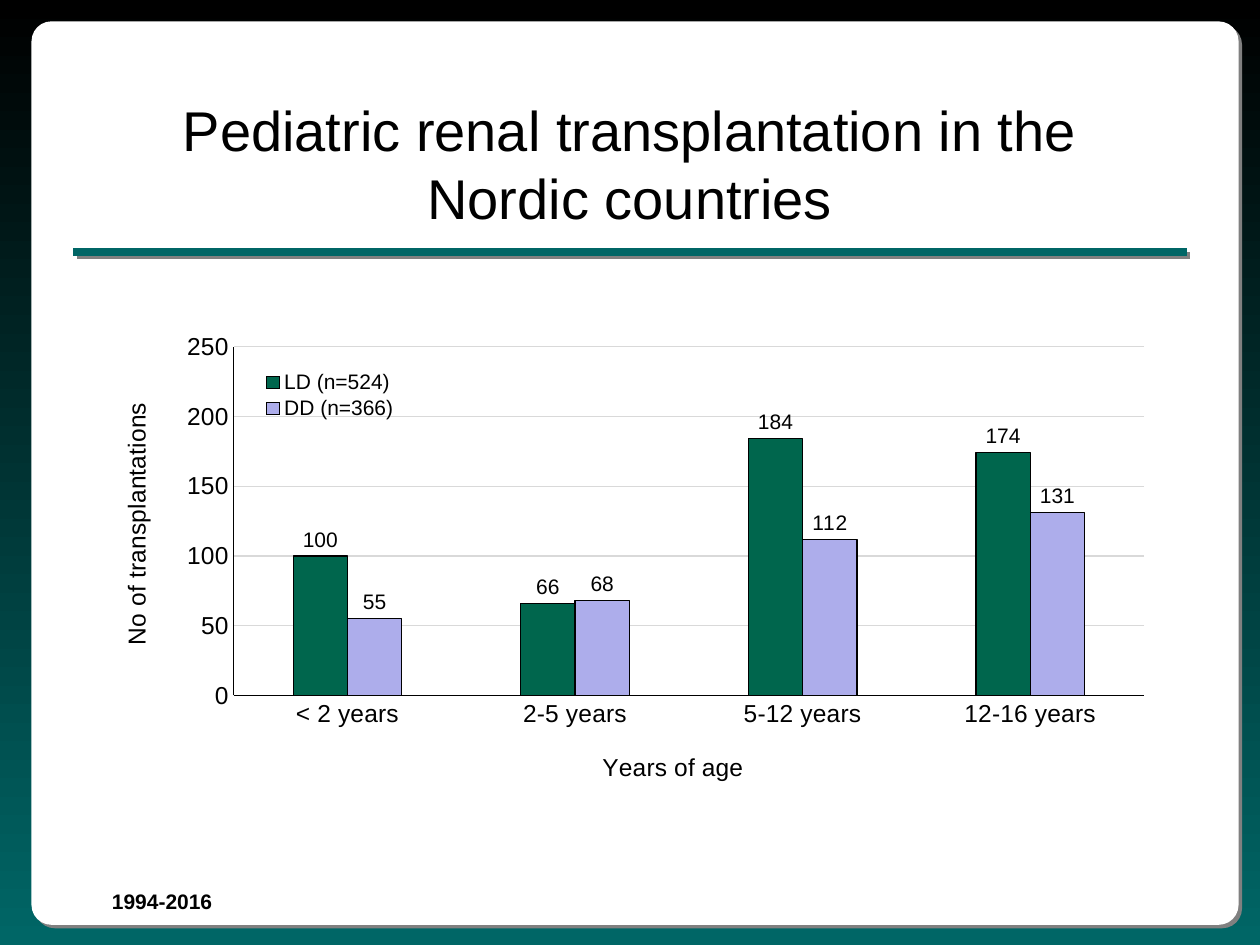
from dataclasses import dataclass

from lxml.etree import SubElement
from pptx import Presentation
from pptx.chart.data import CategoryChartData
from pptx.dml.color import RGBColor as RGB
from pptx.enum.chart import XL_CHART_TYPE as CHART, XL_LABEL_POSITION as LABEL
from pptx.enum.chart import XL_LEGEND_POSITION as LEGEND, XL_TICK_MARK as TICK
from pptx.enum.shapes import MSO_CONNECTOR as CONNECTOR, MSO_SHAPE as SHAPE
from pptx.enum.text import MSO_ANCHOR as ANCHOR, MSO_AUTO_SIZE as AUTO, PP_ALIGN as ALIGN
from pptx.oxml import parse_xml
from pptx.oxml.ns import nsdecls, qn
from pptx.util import Inches, Pt

WIDTH, HEIGHT = Inches(10), Inches(7.5)


@dataclass(frozen=True)
class Theme:
    """Colours, font and type sizes of the slide."""
    font: str = "Arial"
    ink: RGB = RGB(0x00, 0x00, 0x00)
    paper: RGB = RGB(0xFF, 0xFF, 0xFF)
    teal: RGB = RGB(0x00, 0x66, 0x66)
    grid: RGB = RGB(0xD9, 0xD9, 0xD9)
    bars: tuple = (RGB(0x00, 0x66, 0x4D), RGB(0xAD, 0xAD, 0xEB))
    shadow: str = "808080"
    title: int = 32
    axis: int = 14
    small: int = 12
    hairline: float = 0.75
    rule: float = 4.5


THEME = Theme()


def share(left, top, width, height):
    """Turn shares of the slide's size into a box."""
    return int(left * WIDTH), int(top * HEIGHT), int(width * WIDTH), int(height * HEIGHT)


def style(font, size, bold=False):
    """Apply the theme font in ink."""
    font.name, font.size, font.bold = THEME.font, Pt(size), bold
    font.color.rgb = THEME.ink


def outline(line, color=THEME.ink, width=THEME.hairline):
    """Give a line its colour and width."""
    line.color.rgb = color
    line.width = Pt(width)


def write(tf, text, size, bold=False, align=ALIGN.LEFT):
    """Put one styled run into a text frame."""
    p = tf.paragraphs[0]
    p.alignment = align
    r = p.add_run()
    r.text = text
    style(r.font, size, bold)


def cast_shadow(sp):
    """Give a shape or connector a hard diagonal shadow."""
    sp.element.spPr.append(parse_xml(
        f'<a:effectLst {nsdecls("a")}>'
        f'<a:outerShdw dist="{Pt(2.8)}" dir="2700000" algn="ctr" rotWithShape="0">'
        f'<a:srgbClr val="{THEME.shadow}"/></a:outerShdw></a:effectLst>'))


def place(parent, index, x, y, w=None, h=None, inner=False):
    """Set the manual layout of a chart part in shares of the chart."""
    for old in parent.findall(qn("c:layout")):
        parent.remove(old)
    layout = parse_xml(f'<c:layout {nsdecls("c")}><c:manualLayout/></c:layout>')
    values = {"layoutTarget": "inner" if inner else None,
              "xMode": "edge", "yMode": "edge", "x": x, "y": y, "w": w, "h": h}
    for name, value in values.items():
        if value is not None:
            SubElement(layout[0], qn(f"c:{name}")).set("val", str(value))
    parent.insert(index, layout)


def add_background(s):
    """Fill the slide from black down to teal."""
    fill = s.background.fill
    fill.gradient()
    fill.gradient_angle = 270
    for stop, color in zip(fill.gradient_stops, (THEME.ink, THEME.teal)):
        stop.color.rgb = color


def add_panel(s, box):
    """Add the rounded white panel."""
    sp = s.shapes.add_shape(SHAPE.ROUNDED_RECTANGLE, *box)
    sp.adjustments[0] = 0.022
    sp.fill.solid()
    sp.fill.fore_color.rgb = THEME.paper
    sp.line.fill.background()
    cast_shadow(sp)


def add_period(s, text, box):
    """Add the small bold period label."""
    tf = s.shapes.add_textbox(*box).text_frame
    tf.word_wrap = True
    tf.auto_size = AUTO.SHAPE_TO_FIT_TEXT
    write(tf, text, THEME.small, bold=True)


def add_rule(s, left, right, y):
    """Add the teal rule under the title."""
    x1, y1, x2, _ = share(left, y, right, 0)
    rule = s.shapes.add_connector(CONNECTOR.STRAIGHT, x1, y1, x2, y1)
    outline(rule.line, THEME.teal, THEME.rule)
    cast_shadow(rule)
    return rule


def set_title(s, text, box, below):
    """Fill the title placeholder and bring it in front of the rule."""
    sp = s.shapes.title
    sp.left, sp.top, sp.width, sp.height = box
    sp.text_frame.vertical_anchor = ANCHOR.MIDDLE
    sp.text_frame.word_wrap = True
    write(sp.text_frame, text, THEME.title, align=ALIGN.CENTER)
    below.element.addnext(sp.element)


def format_axis(axis, title, x, y):
    """Style an axis and place its title."""
    axis.major_tick_mark = axis.minor_tick_mark = TICK.NONE
    style(axis.tick_labels.font, THEME.axis)
    outline(axis.format.line)
    write(axis.axis_title.text_frame, title, THEME.axis, align=ALIGN.CENTER)
    place(axis.axis_title.element, 1, x, y)


def format_series(series, color):
    """Style one set of bars and its value labels."""
    series.format.fill.solid()
    series.format.fill.fore_color.rgb = color
    outline(series.format.line)
    labels = series.data_labels
    labels.show_value = True
    labels.position = LABEL.OUTSIDE_END
    style(labels.font, THEME.small)


def add_bar_chart(s, categories, series, box):
    """Add the clustered columns with legend and axes."""
    data = CategoryChartData()
    data.categories = categories
    for name, values in series.items():
        data.add_series(name, values)
    chart = s.shapes.add_chart(CHART.COLUMN_CLUSTERED, *box, data).chart
    chart.has_title = False
    style(chart.font, 10)
    plot = chart.plots[0]
    plot.gap_width, plot.overlap, plot.vary_by_categories = 219, 0, False
    for bars, color in zip(plot.series, THEME.bars):
        format_series(bars, color)

    format_axis(chart.category_axis, "Years of age", 0.47, 0.82)
    value_axis = chart.value_axis
    format_axis(value_axis, "No of transplantations", 0.02, 0.14)
    value_axis.minimum_scale, value_axis.maximum_scale, value_axis.major_unit = 0, 250, 50
    outline(value_axis.major_gridlines.format.line, THEME.grid)

    chart.has_legend = True
    chart.legend.position = LEGEND.BOTTOM
    chart.legend.include_in_layout = False
    style(chart.legend.font, THEME.small)
    legend, plot_area = (chart.element.find(f".//{qn(tag)}") for tag in ("c:legend", "c:plotArea"))
    place(legend, 1, 0.15, 0.08, 0.14, 0.11)
    place(plot_area, 0, 0.13, 0.04, 0.85, 0.68, inner=True)


def main():
    """Build and save the slide."""
    prs = Presentation()
    prs.slide_width, prs.slide_height = WIDTH, HEIGHT
    s = prs.slides.add_slide(prs.slide_layouts[5])
    add_background(s)
    add_panel(s, (Inches(0.25), Inches(0.17), Inches(9.58), Inches(7.17)))
    add_period(s, "1994-2016", (Inches(0.79), Inches(7), Inches(1.47), Inches(0.3)))
    rule = add_rule(s, 0.058, 0.942, 2 / 7.5)
    set_title(s, "Pediatric renal transplantation in the Nordic countries",
              share(0.075, 0.67 / 7.5, 0.85, 1 / 6), rule)
    add_bar_chart(s, ("< 2 years", "2-5 years", "5-12 years", "12-16 years"),
                  {"LD (n=524)": (100, 66, 184, 174), "DD (n=366)": (55, 68, 112, 131)},
                  share(0.075, 2.59 / 7.5, 0.85, 4.07 / 7.5))
    prs.save("out.pptx")


if __name__ == "__main__":
    main()
